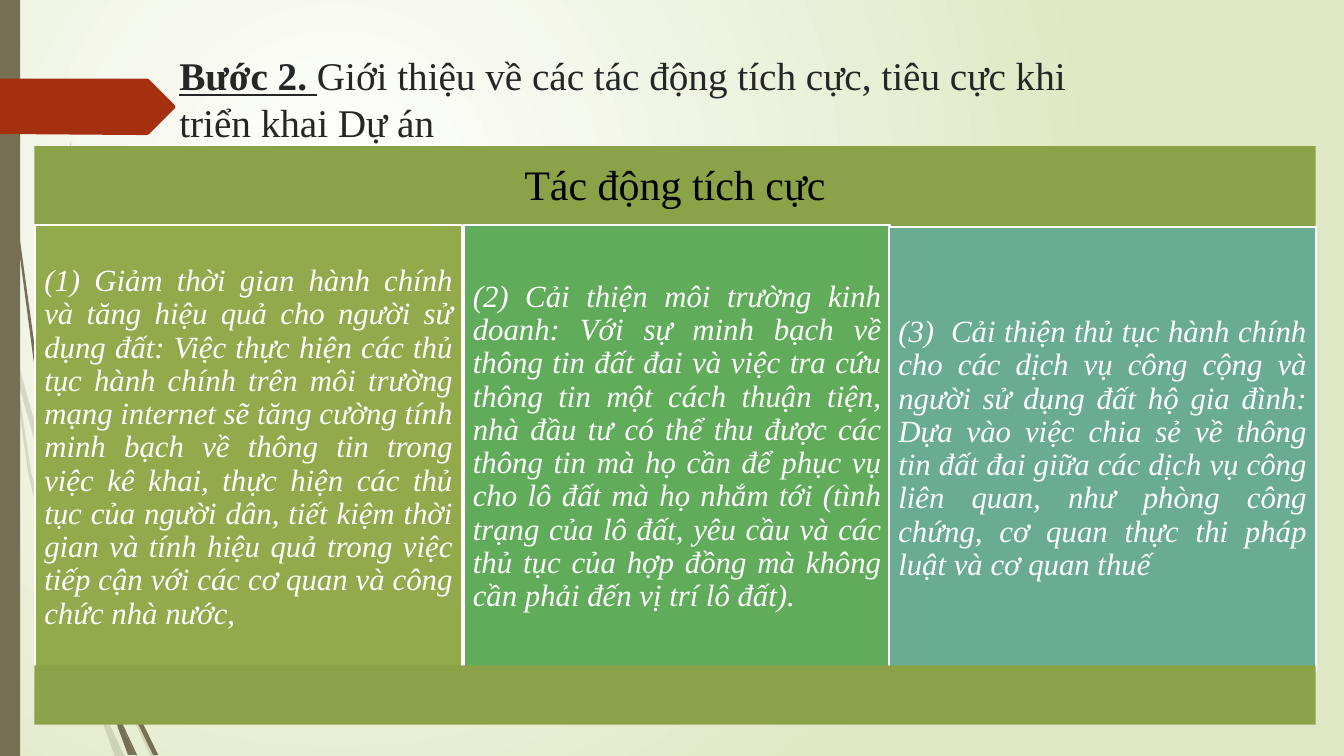
"""Build the slide on the positive effects of the project."""
from pptx import Presentation
from pptx.dml.color import RGBColor
from pptx.enum.shapes import MSO_SHAPE as SHAPE
from pptx.enum.text import MSO_ANCHOR as ANCHOR, PP_ALIGN as ALIGN
from pptx.oxml import parse_xml
from pptx.oxml.ns import nsdecls, qn
from pptx.util import Inches, Pt

COLORS = {
    "glow": "FFFFFF", "backdrop": "DFE8C4", "stem": "766F54", "arrow": "A53010",
    "title": "262626", "heading": "000000", "body": "FFFFFF", "band": "8BA249",
    "olive": "92AA4C", "green": "60AC5A", "teal": "6AAC91",
}
FONT = "Times New Roman"

prs = Presentation()
prs.slide_width, prs.slide_height = Inches(13.33), Inches(7.5)
slide = prs.slides.add_slide(prs.slide_layouts[6])
shapes = slide.shapes

slide.element.cSld.insert(0, parse_xml(
    f'<p:bg {nsdecls("p", "a")}><p:bgPr><a:gradFill rotWithShape="1"><a:gsLst>'
    f'<a:gs pos="0"><a:srgbClr val="{COLORS["glow"]}"/></a:gs>'
    f'<a:gs pos="100000"><a:srgbClr val="{COLORS["backdrop"]}"/></a:gs></a:gsLst>'
    '<a:path path="circle"><a:fillToRect l="50000" t="50000" r="100000" b="100000"/></a:path>'
    '</a:gradFill><a:effectLst/></p:bgPr></p:bg>'))


def paint(shape, color, outlined=False):
    shape.shadow.inherit = False
    shape.fill.solid()
    shape.fill.fore_color.rgb = RGBColor.from_string(COLORS[color])
    if outlined:
        shape.line.color.rgb = RGBColor.from_string(COLORS["body"])
        shape.line.width = Pt(1.25)
    else:
        shape.line.fill.background()
    return shape


def write(shape, runs, size, color, align, anchor, inset, spacing):
    frame = shape.text_frame
    frame.word_wrap = True
    frame.vertical_anchor = anchor
    for side in ("left", "right", "top", "bottom"):
        setattr(frame, f"margin_{side}", Inches(inset[side in ("top", "bottom")]))
    paragraph = frame.paragraphs[0]
    paragraph.alignment = align
    paragraph.line_spacing = spacing
    for text, styles in runs:
        run = paragraph.add_run()
        run.text = text
        run.font.color.rgb = RGBColor.from_string(COLORS[color])
        for name, value in {"name": FONT, "size": Pt(size), **styles}.items():
            setattr(run.font, name, value)


# Outline points are in hundredths of an inch.
pale_stems = [
    [(58, 522), (84, 599), (85, 586), (62, 520), (14, 345), (17, 376)],
    [(92, 607), (88, 596), (88, 610), (123, 694), (150, 751), (155, 751), (127, 692)],
    [(119, 751), (124, 751), (105, 711)],
    [(93, 683), (70, 619), (31, 469), (17, 376), (11, 350), (28, 470),
     (65, 621), (92, 693), (101, 714), (99, 707)],
    [(101, 714), (114, 751), (119, 751)],
    [(96, 692), (93, 683), (99, 707), (101, 714), (119, 751), (105, 711)],
]
dark_stems = [
    [(7, 110), (17, 233), (33, 355), (56, 477), (57, 481), (55, 457), (55, 453),
     (36, 355), (19, 232), (8, 109), (5, 48), (4, 0), (3, 0), (4, 48)],
    [(113, 649), (110, 641), (111, 656), (132, 708), (152, 749), (157, 749), (136, 706)],
    [(60, 472), (58, 453), (54, 349), (58, 245), (63, 193), (70, 141),
     (62, 193), (56, 245), (52, 349), (55, 449)],
    [(133, 749), (136, 749), (122, 719)],
    [(117, 722), (127, 749), (131, 749)],
    [(116, 706), (110, 691), (116, 717), (117, 722), (130, 749), (133, 749), (122, 719)],
]
arrow = [(0, 78), (146, 78), (148, 79), (173, 104), (174, 106), (173, 108),
         (148, 133), (146, 134), (136, 134), (0, 133)]

outlines = [(points, "stem", 20) for points in pale_stems]
outlines += [(points, "stem", 100) for points in dark_stems]
outlines.append((arrow, "arrow", 100))
for points, color, opacity in outlines:
    if color == "arrow":
        paint(shapes.add_shape(SHAPE.RECTANGLE, 0, 0, Inches(0.2), prs.slide_height), "stem")
    builder = shapes.build_freeform(*points[0], scale=Inches(0.01))
    builder.add_line_segments(points[1:], close=True)
    outline = paint(builder.convert_to_shape(), color)
    if opacity < 100:
        tint = outline.element.spPr.find(qn("a:solidFill")).find(qn("a:srgbClr"))
        tint.append(parse_xml(f'<a:alpha {nsdecls("a")} val="{opacity * 1000}"/>'))

title = shapes.add_textbox(Inches(1.68), Inches(0.46), Inches(9.56), Inches(1.24))
write(title, [
    ("Bước 2. ", {"bold": True, "underline": True}),
    ("Giới thiệu về các tác động tích cực, tiêu cực khi triển khai Dự án", {}),
], 28, "title", ALIGN.LEFT, ANCHOR.TOP, (0.1, 0.05), 1.0)

heading = shapes.add_shape(SHAPE.RECTANGLE, Inches(0.34), Inches(1.45), Inches(12.71), Inches(0.81))
paint(heading, "band")
write(heading, [("Tác động tích cực", {})], 30, "heading",
      ALIGN.CENTER, ANCHOR.MIDDLE, (0.12, 0.12), 0.9)

effects = [
    (0.35, 2.23, 4.43, "olive",
     "(1) Giảm thời gian hành chính và tăng hiệu quả cho người sử dụng đất: Việc thực hiện "
     "các thủ tục hành chính trên môi trường mạng internet sẽ tăng cường tính minh bạch về "
     "thông tin trong việc kê khai, thực hiện các thủ tục của người dân, tiết kiệm thời gian "
     "và tính hiệu quả trong việc tiếp cận với các cơ quan và công chức nhà nước,"),
    (4.6, 2.23, 4.41, "green",
     "(2) Cải thiện môi trường kinh doanh: Với sự minh bạch về thông tin đất đai và việc tra "
     "cứu thông tin một cách thuận tiện, nhà đầu tư có thể thu được các thông tin mà họ cần "
     "để phục vụ cho lô đất mà họ nhắm tới (tình trạng của lô đất, yêu cầu và các thủ tục "
     "của hợp đồng mà không cần phải đến vị trí lô đất)."),
    (8.82, 2.25, 4.41, "teal",
     "(3)  Cải thiện thủ tục hành chính cho các dịch vụ công cộng và người sử dụng đất hộ gia "
     "đình: Dựa vào việc chia sẻ về thông tin đất đai giữa các dịch vụ công liên quan, như "
     "phòng công chứng, cơ quan thực thi pháp luật và cơ quan thuế"),
]
for left, top, height, color, text in effects:
    effect = shapes.add_shape(SHAPE.RECTANGLE, Inches(left), Inches(top), Inches(4.23), Inches(height))
    paint(effect, color, outlined=True)
    write(effect, [(text, {"italic": True})], 22, "body",
          ALIGN.JUSTIFY, ANCHOR.MIDDLE, (0.09, 0.09), 0.9)

footer = shapes.add_shape(SHAPE.RECTANGLE, Inches(0.34), Inches(6.6), Inches(12.71), Inches(0.59))
paint(footer, "band")

prs.save("out.pptx")
